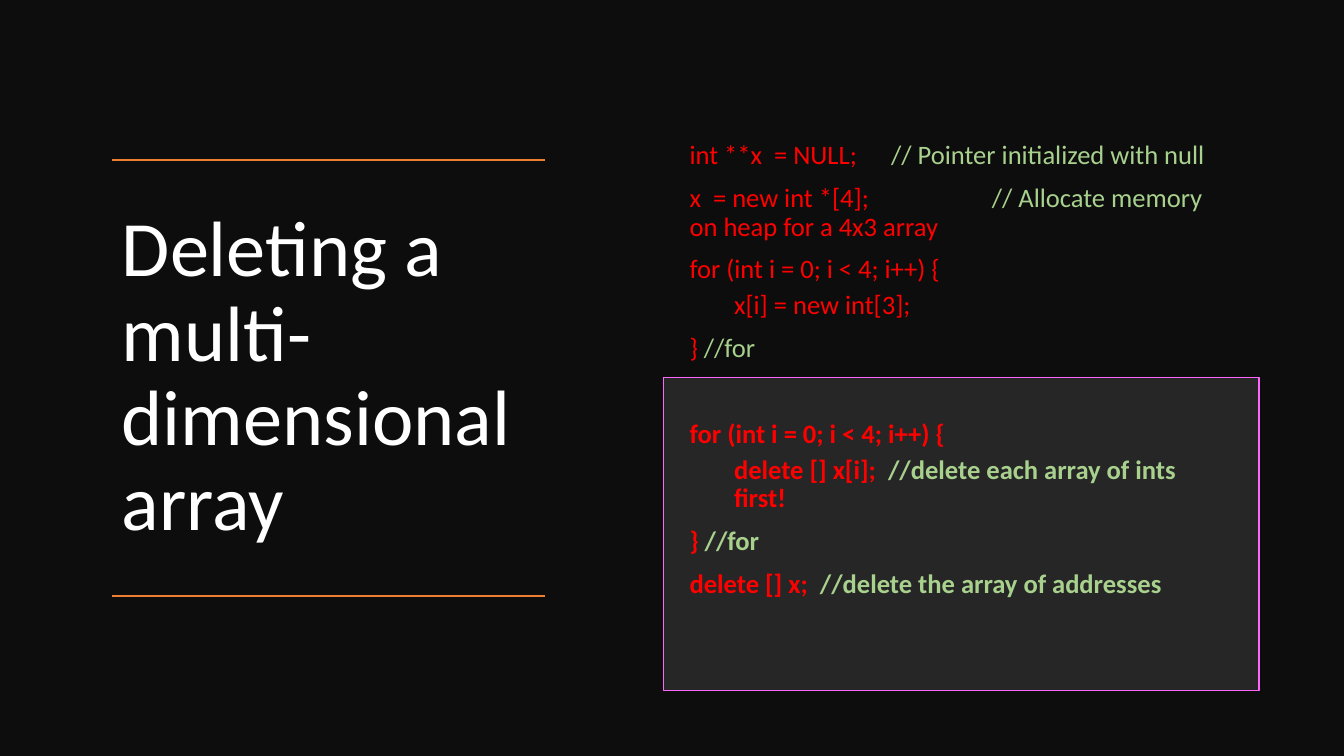
import pptx
import pptx.util
import pptx.dml.color
import pptx.enum.shapes
import pptx.enum.text
from lxml import etree
import lxml.etree

Cm = pptx.util.Cm
Pt = pptx.util.Pt
RGBColor = pptx.dml.color.RGBColor
Anchor = pptx.enum.text.MSO_ANCHOR

BACKGROUND = RGBColor(0x0D, 0x0D, 0x0D)
PANEL = RGBColor(0x26, 0x26, 0x26)
PANEL_BORDER = RGBColor(0xFF, 0x66, 0xFF)
RULE = RGBColor(0xED, 0x7D, 0x31)
WHITE = RGBColor(0xFF, 0xFF, 0xFF)
CODE = RGBColor(0xFF, 0x00, 0x00)
COMMENT = RGBColor(0xA9, 0xD1, 0x8E)

FONT = "Calibri"
WIDTH, HEIGHT = Cm(33.87), Cm(19.05)
DRAWING = "http://schemas.openxmlformats.org/drawingml/2006/main"

# Each line: space before in points, indented, bold, coloured pieces
CODE_LINES = [
    (10, False, False, [("int **x  = NULL;\t", CODE),
                        ("// Pointer initialized with null", COMMENT)]),
    (10, False, False, [("x  = new int *[4];\t\t\t", CODE),
                        ("// Allocate memory ", COMMENT),
                        ("on heap for a 4x3 array", CODE)]),
    (10, False, False, [("for (int i = 0; i < 4; i++) {", CODE)]),
    (5, True, False, [("x[i] = new int[3];", CODE)]),
    (10, False, False, [("} ", CODE), ("//for", COMMENT)]),
    (41, False, True, [("for (int i = 0; i < 4; i++) {", CODE)]),
    (5, True, True, [("delete [] x[i];  ", CODE),
                     ("//delete each array of ints ", COMMENT),
                     ("first!", CODE)]),
    (10, False, True, [("} ", CODE), ("//for", COMMENT)]),
    (10, False, True, [("delete [] x;  ", CODE),
                       ("//delete the array of addresses", COMMENT)]),
]


def add_run(paragraph, text, size, color, bold=False):
    run = paragraph.add_run()
    run.text = text
    run.font.name = FONT
    run.font.size = Pt(size)
    run.font.color.rgb = color
    run.font.bold = bold


def add_text_frame(slide, left, top, width, height, anchor):
    frame = slide.shapes.add_textbox(left, top, width, height).text_frame
    frame.word_wrap = True
    frame.vertical_anchor = anchor
    return frame


def add_panel(slide, left, top, width, height, fill, border=None):
    rectangle = pptx.enum.shapes.MSO_SHAPE.RECTANGLE
    shape = slide.shapes.add_shape(rectangle, left, top, width, height)
    shape.shadow.inherit = False
    shape.fill.solid()
    shape.fill.fore_color.rgb = fill
    if border is None:
        shape.line.fill.background()
    else:
        shape.line.color.rgb = border
        shape.line.width = Pt(0.75)


def add_rule(slide, left, right, y):
    straight = pptx.enum.shapes.MSO_CONNECTOR.STRAIGHT
    connector = slide.shapes.add_connector(straight, right, y, left, y)
    connector.line.color.rgb = RULE
    connector.line.width = Pt(1)
    properties = connector._element.spPr
    lxml.etree.SubElement(properties, f"{{{DRAWING}}}effectLst")


def add_title(slide, left, top, width, height):
    frame = add_text_frame(slide, left, top, width, height, Anchor.MIDDLE)
    paragraph = frame.paragraphs[0]
    paragraph.line_spacing = 0.9
    add_run(paragraph, "Deleting a multi-dimensional array", 56, WHITE)
    # Rules along the top and bottom of the title
    for y in (top, top + height):
        add_rule(slide, left, left + width, y)


def add_code(slide, left, top, width, height):
    # Panel behind the deleting half
    add_panel(slide, left - Cm(0.41), top + Cm(6.44), Cm(15.01), Cm(7.9),
              PANEL, PANEL_BORDER)
    # Code lines
    frame = add_text_frame(slide, left, top, width, height, Anchor.TOP)
    frame.margin_top = Cm(0.5)
    for number, (space, indented, bold, pieces) in enumerate(CODE_LINES):
        paragraph = frame.add_paragraph() if number else frame.paragraphs[0]
        paragraph.line_spacing = 0.9
        paragraph.space_before = Pt(space)
        if indented:
            paragraph.level = 1
            properties = paragraph._p.get_or_add_pPr()
            properties.set("marL", str(Cm(1.12)))
            properties.set("indent", "0")
        for text, color in pieces:
            add_run(paragraph, text, 19, color, bold)


def main():
    presentation = pptx.Presentation()
    presentation.slide_width, presentation.slide_height = WIDTH, HEIGHT
    slide = presentation.slides.add_slide(presentation.slide_layouts[6])
    add_panel(slide, 0, 0, WIDTH, HEIGHT, BACKGROUND)
    add_title(slide, Cm(2.82), Cm(4.03), Cm(10.92), Cm(10.99))
    add_code(slide, Cm(17.13), Cm(3.07), Cm(13.92), Cm(13.21))
    presentation.save("out.pptx")


if __name__ == "__main__":
    main()
